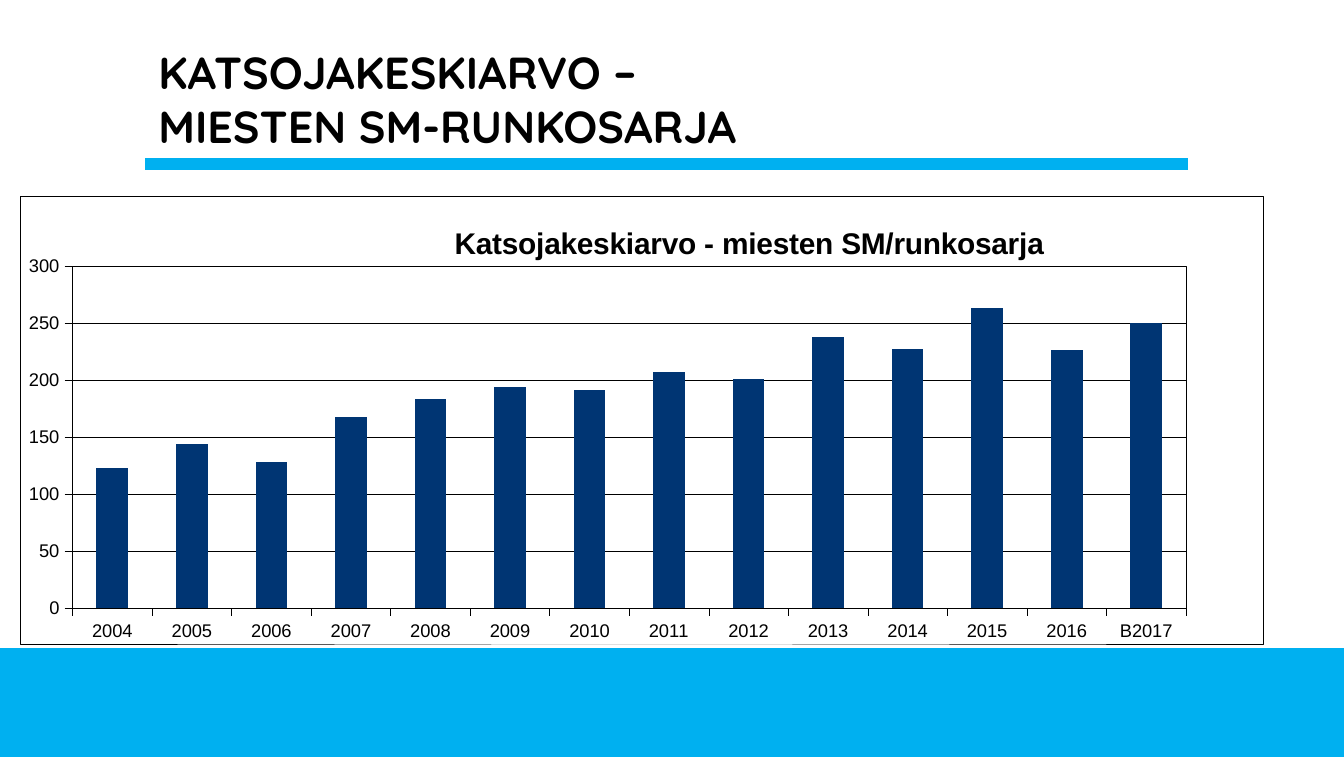
from lxml.etree import SubElement
from pptx import Presentation
from pptx.chart.data import CategoryChartData
from pptx.dml.color import RGBColor
from pptx.enum.chart import XL_CHART_TYPE, XL_TICK_MARK
from pptx.enum.shapes import MSO_CONNECTOR, MSO_SHAPE
from pptx.enum.text import MSO_ANCHOR
from pptx.oxml import parse_xml
from pptx.oxml.ns import nsdecls, qn
from pptx.util import Inches, Pt

BLACK, WHITE, SKY, NAVY = "000000", "FFFFFF", "00B0F0", "003573"


def rgb(hex_color):
    return RGBColor.from_string(hex_color)


def manual_layout(x, y, w=None, h=None):
    """Chart layout in fractions of the chart area."""
    inner = '<c:layoutTarget val="inner"/>' if w else ""
    size = f'<c:w val="{w}"/><c:h val="{h}"/>' if w else ""
    return parse_xml(
        f'<c:layout {nsdecls("c")}><c:manualLayout>{inner}'
        f'<c:xMode val="edge"/><c:yMode val="edge"/>'
        f'<c:x val="{x}"/><c:y val="{y}"/>{size}'
        f'</c:manualLayout></c:layout>')


def set_layout(parent, layout, *predecessors):
    """Replace the layout of a plot area or title, after its predecessors."""
    for old in parent.findall(qn("c:layout")):
        parent.remove(old)
    position = sum(child.tag in [qn(tag) for tag in predecessors] for child in parent)
    parent.insert(position, layout)


def area_format(fill, border=None):
    line = (f'<a:ln w="{Pt(0.25)}"><a:solidFill><a:srgbClr val="{border}"/>'
            f'</a:solidFill></a:ln>') if border else ""
    return parse_xml(
        f'<c:spPr {nsdecls("c", "a")}><a:solidFill><a:srgbClr val="{fill}"/>'
        f'</a:solidFill>{line}</c:spPr>')


class SlideBuilder:
    heading_font = "Quicksand"
    chart_font = "Arial"

    def __init__(self, slide):
        self.slide = slide

    def band(self, left, top, width, height, color):
        band = self.slide.shapes.add_shape(
            MSO_SHAPE.RECTANGLE, Inches(left), Inches(top), Inches(width), Inches(height))
        band.shadow.inherit = False
        band.fill.solid()
        band.fill.fore_color.rgb = rgb(color)
        band.line.fill.background()

    def rule(self, left, right, y, color, weight):
        rule = self.slide.shapes.add_connector(
            MSO_CONNECTOR.STRAIGHT, Inches(left), Inches(y), Inches(right), Inches(y))
        rule.line.color.rgb = rgb(color)
        rule.line.width = Pt(weight)
        SubElement(rule._element.spPr, qn("a:effectLst"))

    def heading(self, left, top, width, height, text, size):
        box = self.slide.shapes.add_textbox(
            Inches(left), Inches(top), Inches(width), Inches(height))
        frame = box.text_frame
        frame.word_wrap = True
        frame.vertical_anchor = MSO_ANCHOR.BOTTOM
        frame.text = text
        for run in frame.paragraphs[0].runs:
            self.style_font(run.font, self.heading_font, size, bold=True)

    def style_font(self, font, name, size, bold=False):
        font.name, font.size, font.bold = name, Pt(size), bold
        font.color.rgb = rgb(BLACK)

    def style_line(self, line):
        line.color.rgb = rgb(BLACK)
        line.width = Pt(0.25)

    def column_chart(self, left, top, width, height, title, attendance):
        chart_data = CategoryChartData(number_format="0")
        chart_data.categories = list(attendance)
        chart_data.add_series("Katsojakeskiarvo", list(attendance.values()))
        chart = self.slide.shapes.add_chart(
            XL_CHART_TYPE.COLUMN_CLUSTERED, Inches(left), Inches(top),
            Inches(width), Inches(height), chart_data).chart
        chart.has_legend = False
        self.style_font(chart.font, self.chart_font, 8.2)

        # Chart title
        chart.has_title = True
        title_frame = chart.chart_title.text_frame
        title_frame.text = title
        self.style_font(title_frame.paragraphs[0].runs[0].font, self.chart_font, 16, bold=True)
        set_layout(chart.chart_title._element, manual_layout(0.345, 0.05), "c:tx")

        # Columns
        plot = chart.plots[0]
        plot.gap_width = 150
        plot.vary_by_categories = False
        columns = plot.series[0].format.fill
        columns.solid()
        columns.fore_color.rgb = rgb(NAVY)

        # Axes
        for axis in (chart.category_axis, chart.value_axis):
            axis.major_tick_mark = XL_TICK_MARK.OUTSIDE
            axis.minor_tick_mark = XL_TICK_MARK.NONE
            self.style_font(axis.tick_labels.font, self.chart_font, 9.8)
            self.style_line(axis.format.line)
        scale = chart.value_axis
        scale.minimum_scale, scale.maximum_scale, scale.major_unit = 0, 300, 50
        scale.tick_labels.number_format = "0"
        scale.tick_labels.number_format_is_linked = False
        scale.has_major_gridlines = True
        self.style_line(scale.major_gridlines.format.line)

        # Plot area and chart frame
        chart_root = chart._chartSpace
        plot_area = chart_root.chart.plotArea
        set_layout(plot_area, manual_layout(0.042, 0.156, 0.896, 0.764))
        plot_area.append(area_format(WHITE, BLACK))
        chart_root.chart.addnext(area_format(WHITE, BLACK))


def main():
    presentation = Presentation()
    presentation.slide_width, presentation.slide_height = Inches(10), Inches(5.63)
    builder = SlideBuilder(presentation.slides.add_slide(presentation.slide_layouts[6]))

    # Footer band and heading
    builder.band(0, 4.82, 10, 0.81, SKY)
    builder.rule(1.08, 8.84, 1.22, SKY, 6)
    builder.heading(1.08, 0, 7.76, 1.18, "KATSOJAKESKIARVO –\vMIESTEN SM-RUNKOSARJA", 24)

    # Average attendance per season
    seasons = [str(year) for year in range(2004, 2017)] + ["B2017"]
    averages = [123, 144, 128, 168, 183, 194, 191, 207, 201, 238, 227, 263, 226, 250]
    builder.column_chart(0.15, 1.46, 9.25, 3.33, "Katsojakeskiarvo - miesten SM/runkosarja",
                         dict(zip(seasons, averages)))

    presentation.save("out.pptx")


if __name__ == "__main__":
    main()
